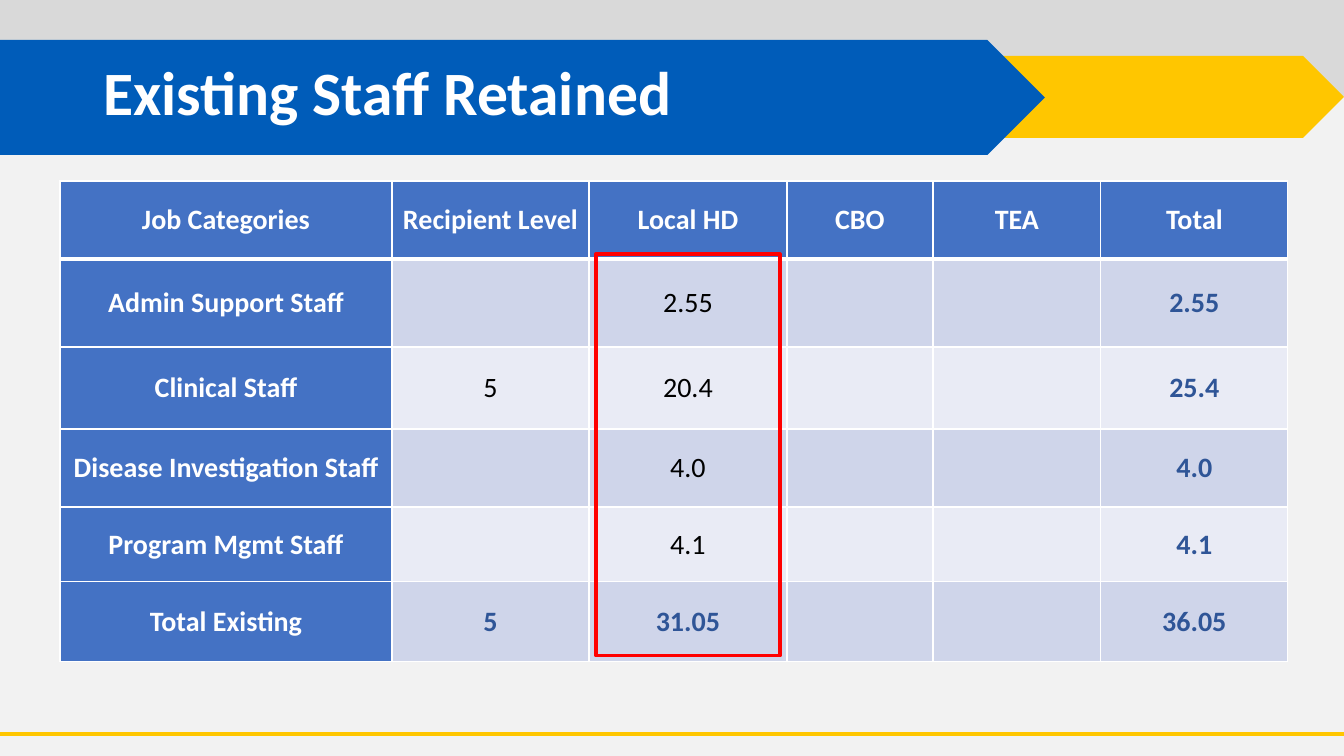
from lxml import etree
from pptx import Presentation, util as u
from pptx.dml.color import RGBColor
from pptx.enum import shapes, text
from pptx.oxml.ns import qn

PX = 914400 / 100.8
FONT = "Calibri"
WHITE, BLACK, GOLD = "FFFFFF", "000000", "FFC600"
HEADER_BLUE, TOTAL_BLUE = "4472C4", "2F5597"
ROW_BANDS = ["CFD5EA", "E9EBF5"]

COLUMN_WIDTHS = [332, 197, 198, 146, 168, 187]
ROW_HEIGHTS = [78, 88, 82, 78, 75, 80]
STAFF = [
    ["Job Categories", "Recipient Level", "Local HD", "CBO", "TEA", "Total"],
    ["Admin Support Staff", "", "2.55", "", "", "2.55"],
    ["Clinical Staff", "5", "20.4", "", "", "25.4"],
    ["Disease Investigation Staff", "", "4.0", "", "", "4.0"],
    ["Program Mgmt Staff", "", "4.1", "", "", "4.1"],
    ["Total Existing", "5", "31.05", "", "", "36.05"],
]


def px(value):
    return u.Emu(round(value * PX))


def rgb(hex_color):
    return RGBColor.from_string(hex_color)


def set_font(paragraph, size, color, bold):
    font = paragraph.font
    font.name, font.size, font.bold = FONT, u.Pt(size), bold
    font.color.rgb = rgb(color)


def add_block(slide, kind, box, fill=None, outline=None):
    block = slide.shapes.add_shape(kind, *map(px, box))
    block.shadow.inherit = False
    if fill:
        block.fill.solid()
        block.fill.fore_color.rgb = rgb(fill)
    else:
        block.fill.background()
    if outline:
        block.line.color.rgb = rgb(outline)
        block.line.width = u.Pt(2.25)
    else:
        block.line.fill.background()


def add_rule(slide, y, color):
    rule = slide.shapes.add_connector(
        shapes.MSO_CONNECTOR.STRAIGHT, 0, px(y), px(1344), px(y))
    rule.line.color.rgb = rgb(color)
    rule.line.width = u.Pt(3)
    etree.SubElement(rule._element.spPr, qn("a:effectLst"))


def format_title(slide, wording):
    title = slide.shapes.title
    title.left, title.top, title.width, title.height = map(px, (93, 23, 1159, 146))
    frame = title.text_frame
    frame.text = wording
    frame.auto_size = text.MSO_AUTO_SIZE.NONE
    frame.vertical_anchor = text.MSO_ANCHOR.MIDDLE
    heading = frame.paragraphs[0]
    heading.alignment = text.PP_ALIGN.LEFT
    heading.line_spacing = 0.9
    set_font(heading, 44, WHITE, True)
    # Bring the title in front of the banner
    slide.shapes._spTree.append(title._element)


def set_borders(cell, bottom_width):
    properties = cell._tc.get_or_add_tcPr()
    widths = {"lnL": 1, "lnR": 1, "lnT": 1, "lnB": bottom_width}
    for position, (side, width) in enumerate(widths.items()):
        border = etree.Element(qn(f"a:{side}"), w=str(u.Pt(width)))
        fill = etree.SubElement(border, qn("a:solidFill"))
        etree.SubElement(fill, qn("a:srgbClr"), val=WHITE)
        properties.insert(position, border)


def cell_style(row, column):
    """Return fill, text colour and weight for a place in the table."""
    if row == 0 or column == 0:
        return HEADER_BLUE, WHITE, True
    band = ROW_BANDS[(row - 1) % 2]
    if row == len(STAFF) - 1 or column == len(COLUMN_WIDTHS) - 1:
        return band, TOTAL_BLUE, True
    return band, BLACK, False


def fill_cell(cell, wording, row, column):
    fill, color, bold = cell_style(row, column)
    cell.fill.solid()
    cell.fill.fore_color.rgb = rgb(fill)
    cell.margin_left = cell.margin_right = px(5)
    cell.margin_top = cell.margin_bottom = px(3)
    cell.vertical_anchor = text.MSO_ANCHOR.MIDDLE
    cell.text = wording
    entry = cell.text_frame.paragraphs[0]
    entry.alignment = text.PP_ALIGN.CENTER
    set_font(entry, 20, color, bold)
    set_borders(cell, 3 if row == 0 else 1)


def add_staff_table(slide, left, top):
    table = slide.shapes.add_table(
        len(STAFF), len(COLUMN_WIDTHS), px(left), px(top),
        px(sum(COLUMN_WIDTHS)), px(sum(ROW_HEIGHTS))).table
    for column, width in zip(table.columns, COLUMN_WIDTHS):
        column.width = px(width)
    for row, height in zip(table.rows, ROW_HEIGHTS):
        row.height = px(height)
    for r, entries in enumerate(STAFF):
        for c, wording in enumerate(entries):
            fill_cell(table.cell(r, c), wording, r, c)


def main():
    deck = Presentation()
    deck.slide_width, deck.slide_height = px(1344), px(756)
    slide = deck.slides.add_slide(deck.slide_layouts[5])
    slide.background.fill.solid()
    slide.background.fill.fore_color.rgb = rgb("F2F2F2")

    # Banner and footer rule
    pentagon = shapes.MSO_SHAPE.PENTAGON
    rectangle = shapes.MSO_SHAPE.RECTANGLE
    add_block(slide, rectangle, (0, 0, 1344, 96), fill="D9D9D9")
    add_block(slide, pentagon, (714, 56, 630, 82), fill=GOLD)
    add_block(slide, pentagon, (0, 40, 1045, 115), fill="005CB9")
    add_rule(slide, 734, GOLD)
    format_title(slide, "Existing Staff Retained")

    # Staff table with the Local HD column highlighted
    add_staff_table(slide, 60, 181)
    add_block(slide, rectangle, (596, 254, 184, 402), outline="FF0000")

    deck.save("out.pptx")


if __name__ == "__main__":
    main()
